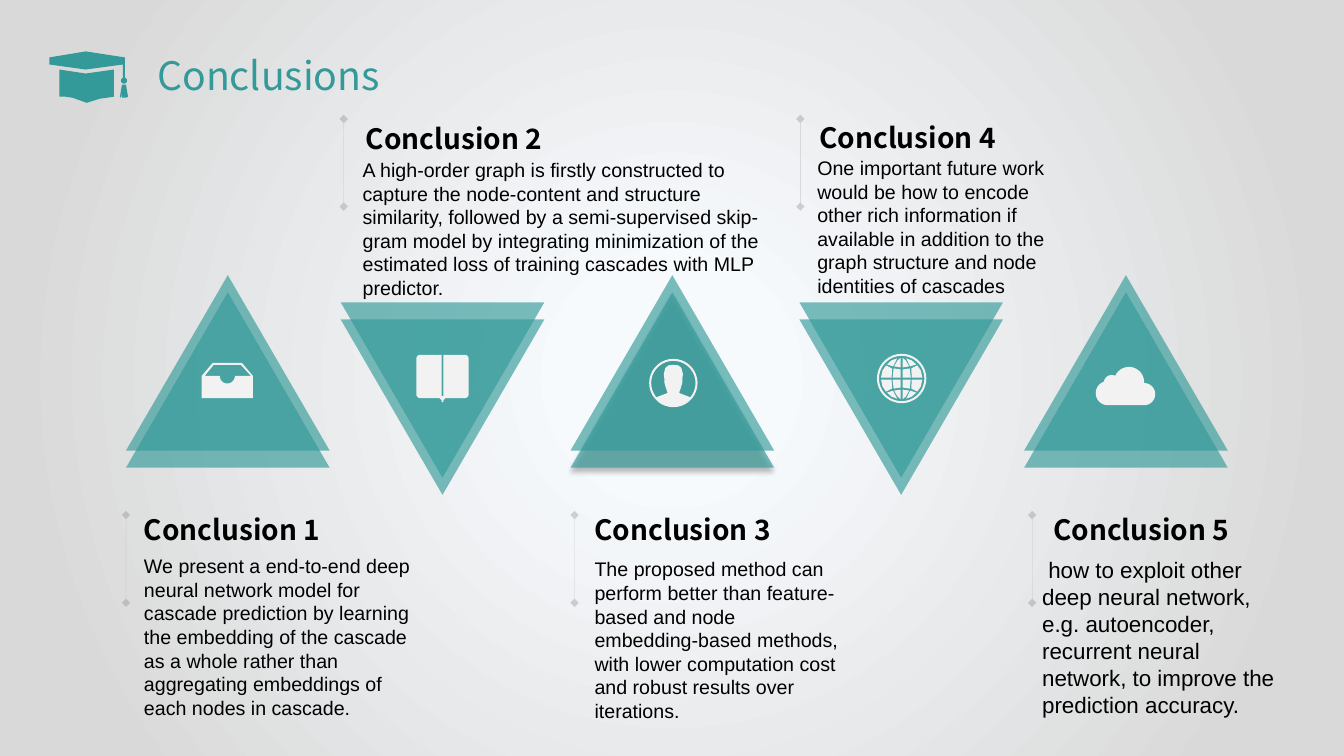
from itertools import product
from math import cos, radians, sin

from lxml.etree import SubElement
from pptx import Presentation
from pptx.dml.color import RGBColor
from pptx.enum.shapes import MSO_CONNECTOR, MSO_SHAPE
from pptx.enum.text import MSO_ANCHOR, MSO_AUTO_SIZE, PP_ALIGN
from pptx.oxml.ns import qn
from pptx.util import Inches, Pt

TEAL = RGBColor(0x33, 0x9A, 0x99)
PALE = RGBColor(0xF2, 0xF2, 0xF2)
GRAY = RGBColor(0x80, 0x80, 0x80)
BLACK = RGBColor(0, 0, 0)
GLOW = RGBColor(0xF7, 0xFA, 0xFD)
EDGE = RGBColor(0xD9, 0xD9, 0xD9)

COLS, ROWS = 133.33, 75  # grid of square cells
TRI_W, TRI_H, STEP = 20.2, 17.4, 1.7
RULE_H = 8.7

HEAD = {"name": "Noto Sans CJK SC", "size": Pt(20), "bold": True}
BODY = {"name": "Arial", "size": Pt(14)}
LAST = {"name": "Arial", "size": Pt(16)}
TITLE = {"name": "Noto Sans CJK SC", "size": Pt(28), "bold": False}
BARE = {"margin_left": 0, "margin_top": 0, "margin_right": 0, "margin_bottom": 0,
        "word_wrap": True, "auto_size": MSO_AUTO_SIZE.NONE,
        "vertical_anchor": MSO_ANCHOR.MIDDLE}
GROW = {"word_wrap": True, "auto_size": MSO_AUTO_SIZE.SHAPE_TO_FIT_TEXT}
LONG = {"word_wrap": False, "auto_size": MSO_AUTO_SIZE.SHAPE_TO_FIT_TEXT}

# triangle left, points up, rule (left, top), heading (left, top),
# body (left, top, width, height), body font, body text
ITEMS = [
    (12.5, True, (12.5, 51.1), (13.3, 49.4), (13.3, 54.5, 30.2, 17.5), BODY,
     "We present a end-to-end deep neural network model for cascade prediction by "
     "learning the embedding of the cascade as a whole rather than aggregating "
     "embeddings of each nodes in cascade."),
    (33.8, False, (34.1, 11.8), (35.3, 10.6), (35, 15.2, 42.4, 15.1), BODY,
     "A high-order graph is firstly constructed to capture the node-content and "
     "structure similarity, followed by a semi-supervised skip-gram model by "
     "integrating minimization of the estimated loss of training cascades with "
     "MLP predictor."),
    (56.6, True, (57, 51.1), (58, 49.4), (58, 54.8, 26.6, 17.5), BODY,
     "The proposed method can perform better than feature-based and node "
     "embedding-based methods, with lower computation cost and robust results "
     "over iterations."),
    (79.3, False, (79.4, 11.8), (80.3, 10.5), (80.1, 15, 26.6, 15.1), BODY,
     "One important future work would be how to encode other rich information if "
     "available in addition to the graph structure and node identities of cascades"),
    (101.6, True, (102.4, 51.1), (103.5, 49.4), (102.4, 54.7, 26.6, 17.2), LAST,
     " how to exploit other deep neural network, e.g. autoencoder, recurrent "
     "neural network, to improve the prediction accuracy."),
]


def cell(n):
    return Inches(n / 10)


def style(obj, form):
    for key, value in form.items():
        setattr(obj, key, value)


def tag(parent, name, **attrs):
    return SubElement(parent, qn(name), {k: str(v) for k, v in attrs.items()})


def fade(part, share):
    for color in part.iter(qn("a:srgbClr")):
        tag(color, "a:alpha", val=share * 1000)


def arc(x, y, r, start, end):
    count = max(4, abs(end - start) // 10)
    turns = [radians(start + (end - start) * i / count) for i in range(count + 1)]
    return [(x + r * cos(t), y + r * sin(t)) for t in turns]


def write(box, text, form, frame, color):
    style(box.text_frame, frame)
    para = box.text_frame.paragraphs[0]
    run = para.add_run()
    run.text = text
    style(run.font, form)
    run.font.color.rgb = color
    return para


def label(shapes, place, text, form, frame):
    box = shapes.add_textbox(*map(cell, place))
    return write(box, text, form, frame, BLACK)


def outline(shapes, color, *loops):
    """Draw one filled shape from closed loops of grid points."""
    loops = [[(cell(x), cell(y)) for x, y in loop] for loop in loops]
    pen = shapes.build_freeform(*loops[0][0])
    pen.add_line_segments(loops[0][1:])
    for loop in loops[1:]:
        pen.move_to(*loop[0])
        pen.add_line_segments(loop[1:])
    form = pen.convert_to_shape()
    form.shadow.inherit = False
    form.fill.solid()
    form.fill.fore_color.rgb = color
    form.line.fill.background()


def wedge(shapes, left, top, up):
    tri = shapes.add_shape(MSO_SHAPE.ISOSCELES_TRIANGLE,
                           *map(cell, (left, top, TRI_W, TRI_H)))
    tri.shadow.inherit = False
    tri.fill.solid()
    tri.fill.fore_color.rgb = TEAL
    tri.line.fill.background()
    part = tri._element.spPr
    fade(part, 65)
    if not up:
        part.find(qn("a:xfrm")).set("flipV", "1")
    return part


def shade(part):
    glow = tag(part.find(qn("a:effectLst")), "a:outerShdw", blurRad=Pt(4),
               dist=Pt(3), dir=90 * 60000, algn="t", rotWithShape=0)
    tag(glow, "a:srgbClr", val=BLACK)
    fade(glow, 40)


def rule(shapes, left, top):
    line = shapes.add_connector(MSO_CONNECTOR.STRAIGHT,
                                *map(cell, (left, top, left, top + RULE_H)))
    line.line.color.rgb = GRAY
    line.line.width = Pt(0.25)
    part = line._element.spPr
    fade(part, 33)
    for end in ("a:headEnd", "a:tailEnd"):
        tag(part.find(qn("a:ln")), end, type="diamond")
    tag(part, "a:effectLst")


def paint(slide):
    fill = slide.background.fill
    fill.gradient()
    for stop, (spot, color) in zip(fill.gradient_stops, ((0.13, GLOW), (0.86, EDGE))):
        stop.position = spot
        stop.color.rgb = color
    grad = next(slide._element.iter(qn("a:gradFill")))
    grad.remove(grad.find(qn("a:lin")))
    sides = dict.fromkeys("ltrb", 50000)
    tag(tag(grad, "a:path", path="circle"), "a:fillToRect", **sides)


def cap(shapes):
    board = [(4.9, 5.7), (8.5, 5.1), (12.4, 5.7), (12.4, 7.7),
             *arc(12.3, 8, 0.3, -70, 250), (12.2, 6.4), (8.5, 6.9), (4.9, 6.4)]
    tassel = [(12.1, 8.4), (12.5, 8.4), (12.7, 9.6), (12.5, 9.7), (12.1, 9.7),
              (12.1, 9.1), (12, 9.7), (11.9, 9.6)]
    crown = [(11.3, 9.6), (11.3, 6.9), (8.5, 7.3), (5.9, 6.9), (5.9, 9.6),
             (6.5, 9.6), (7.2, 9.7), (8.6, 10.2), (9.9, 9.8), (10.6, 9.7)]
    outline(shapes, TEAL, board, tassel, crown)


def tray(shapes):
    outline(shapes, PALE,
            [(24, 36), (21.1, 36), (20, 37.3), (20, 39.5), (25.1, 39.5), (25.1, 37.3)],
            [(21.2, 36.2), (23.9, 36.2), (24.9, 37.3),
             *arc(22.55, 37.3, 0.75, 0, 180), (20.3, 37.3)])


def book(shapes):
    outline(shapes, PALE,
            [*arc(46.1, 35.6, 0.4, -90, 0), *arc(46.1, 39.1, 0.4, 0, 90),
             (44.2, 39.5), (44, 39.7), (44, 39.9), (43.8, 39.9), (43.8, 39.7),
             (43.6, 39.5), *arc(41.7, 39.1, 0.4, 90, 180),
             *arc(41.7, 35.6, 0.4, 180, 270), (43.8, 35.2), (43.8, 39.3),
             (44, 39.3), (44, 35.2)])


def user(shapes):
    x, y = 66.8, 38
    half = [(0.6, 1), (0.6, 0.9), (0.7, 0.6), (0.8, 0.3), (0.9, -0.1), (0.9, -0.5),
            (0.95, -0.9), (0.8, -1.5), (0.5, -1.75), (0.1, -1.8)]
    bust = half + [(-dx, dy) for dx, dy in reversed(half)]
    outline(shapes, PALE, arc(x, y, 2.4, 0, 360),
            [(x + dx, y + dy) for dx, dy in bust] + arc(x, y, 2.2, 140, 400))


def globe(shapes):
    x, y = 89.45, 37.55
    group = shapes.add_group_shape().shapes
    outline(group, PALE, arc(x, y, 2.45, 0, 360), arc(x, y, 2.25, 0, 360))
    panes = [
        [(0.1, 0.1), (0.9, 0.1), (0.8, 1), (0.1, 0.9)],
        [(0.1, 2.05), (0.4, 1.8), (0.75, 1.2), (0.1, 1.1)],
        [(0.45, 2), (1, 1.8), (1.45, 1.4), (0.85, 1.2)],
        [(1, 0.1), (2.05, 0.1), (1.9, 0.8), (1.55, 1.3), (0.95, 1)],
    ]
    for pane, h, v in product(panes, (-1, 1), (-1, 1)):
        outline(group, PALE, [(x + h * dx, y + v * dy) for dx, dy in pane])


def cloud(shapes):
    outline(shapes, PALE,
            [*arc(112, 37.9, 1.5, 0, -155), *arc(110.3, 38, 0.8, -90, -180),
             *arc(109.9, 39, 1.2, -110, -270), *arc(113.5, 39.1, 1.1, 90, -90)])


def main():
    deck = Presentation()
    deck.slide_width, deck.slide_height = cell(COLS), cell(ROWS)
    slide = deck.slides.add_slide(deck.slide_layouts[5])
    shapes = slide.shapes
    paint(slide)

    # Title with cap
    title = shapes.title
    style(title, dict(zip(("left", "top", "width", "height"),
                          map(cell, (13.9, 5.1, 25.5, 4.7)))))
    write(title, "Conclusions", TITLE, BARE, TEAL).alignment = PP_ALIGN.CENTER
    cap(shapes)

    # Five conclusions, each with triangles, icon, rule and text
    icons = (tray, book, user, globe, cloud)
    for num, (item, icon) in enumerate(zip(ITEMS, icons), 1):
        left, up, mark, head, place, form, text = item
        top, step = (29, -STEP) if up else (30, STEP)
        back = wedge(shapes, left, top, up)
        if icon is user:
            shade(back)
        wedge(shapes, left, top + step, up)
        icon(shapes)
        rule(shapes, *mark)
        para = label(shapes, (*head, 19.9, 5.4), f"Conclusion {num}", HEAD, LONG)
        para.line_spacing = 1.3
        label(shapes, place, text, form, GROW)

    deck.save("out.pptx")


if __name__ == "__main__":
    main()
